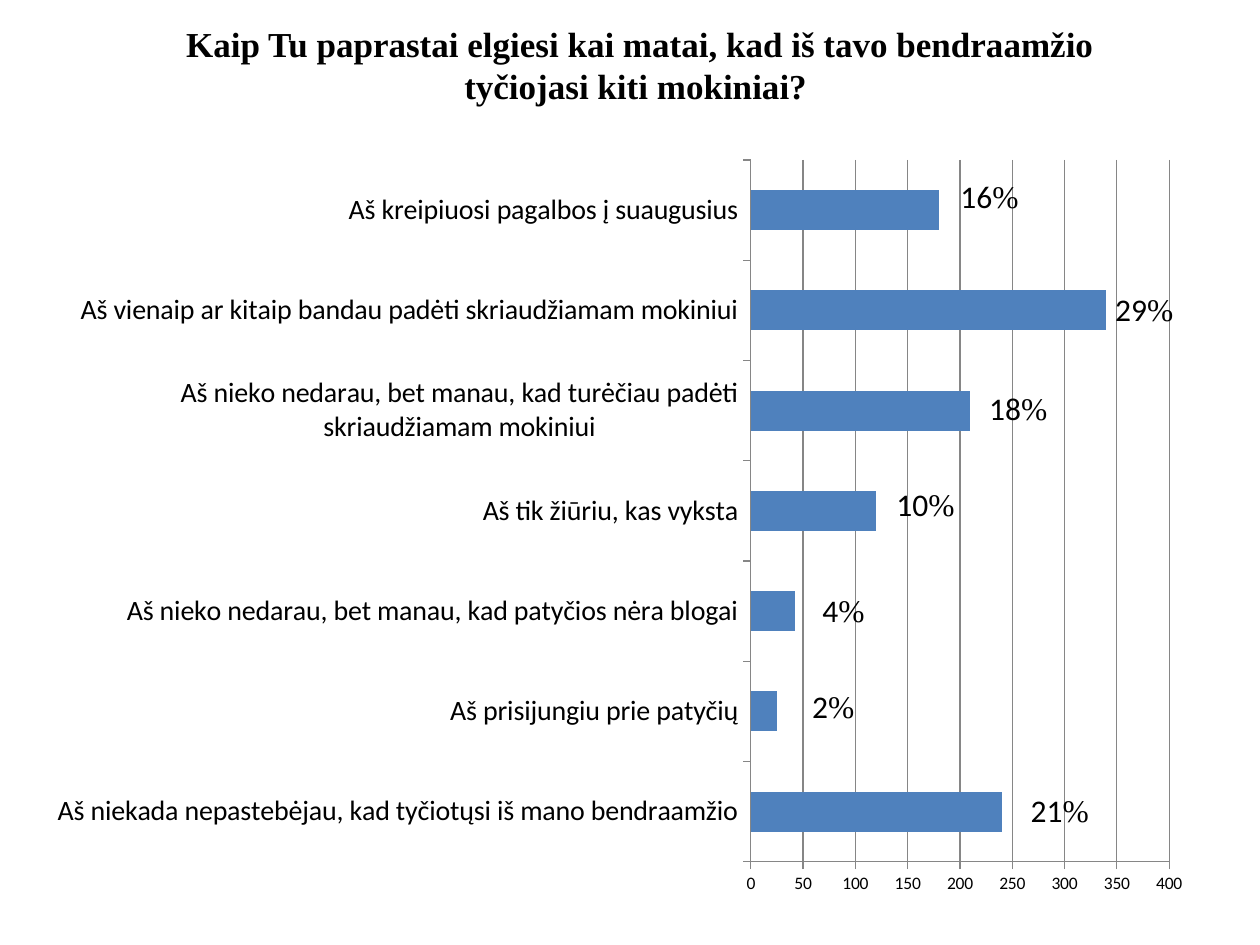
from lxml import etree
from pptx import Presentation
from pptx import util as u
from pptx.chart.data import CategoryChartData
from pptx.dml.color import RGBColor
from pptx.enum import chart as ch, text
from pptx.oxml.ns import qn

# Content
TITLE = "Kaip Tu paprastai elgiesi kai matai, kad iš tavo bendraamžio tyčiojasi kiti mokiniai? "
# answer, count, share, label shift right and down in inches
ANSWERS = [
    ("Aš niekada nepastebėjau, kad tyčiotųsi iš mano bendraamžio", 240, 21, 0.19, 0),
    ("Aš prisijungiu prie patyčių", 25, 2, 0.24, -0.03),
    ("Aš nieko nedarau, bet manau, kad patyčios nėra blogai", 42, 4, 0.18, 0),
    ("Aš tik žiūriu, kas vyksta", 120, 10, 0.12, -0.04),
    ("Aš nieko nedarau, bet manau, kad turėčiau padėti skriaudžiamam mokiniui", 210, 18, 0.11, -0.01),
    ("Aš vienaip ar kitaip bandau padėti skriaudžiamam mokiniui", 340, 29, 0.03, 0),
    ("Aš kreipiuosi pagalbos į suaugusius", 180, 16, 0.13, -0.1),
]
CHART = (0.28, 1.15, 9.29, 6.07)
PLOT = (5.68, 0.12, 3.32, 5.57)  # inside the chart
THEME = {
    "text": RGBColor(0, 0, 0), "bar": RGBColor(0x4F, 0x81, 0xBD),
    "grid": RGBColor(0x86, 0x86, 0x86),
    "head": "Times New Roman", "body": "Calibri",
    "title": 20, "category": 16, "label": 18, "axis": 10,
}


def style(font, name, size, bold=False):
    font.name, font.size, font.bold = name, u.Pt(size), bold
    font.color.rgb = THEME["text"]


def manual_layout(inches, **modes):
    """Layout element with lengths as shares of the chart's size."""
    layout = etree.Element(qn("c:layout"))
    manual = etree.SubElement(layout, qn("c:manualLayout"))
    shares = {tag: round(n / whole, 4)
              for tag, n, whole in zip("xywh", inches, CHART[2:] * 2)}
    for tag, val in {**modes, **shares}.items():
        etree.SubElement(manual, qn("c:" + tag)).set("val", str(val))
    return layout


def add_title(s):
    sp = s.shapes.add_textbox(*map(u.Inches, (1.22, 0.13, 7.72, 0.77)))
    tf = sp.text_frame
    tf.word_wrap = True
    p = tf.paragraphs[0]
    p.alignment = text.PP_ALIGN.CENTER
    r = p.add_run()
    r.text = TITLE
    style(r.font, THEME["head"], THEME["title"], True)


def add_labels(series):
    labels = series.data_labels
    labels.show_value = True
    style(labels.font, THEME["body"], THEME["label"])
    for i, (_, _, share, _, _) in enumerate(ANSWERS):
        label = series.points[i].data_label
        p = label.text_frame.paragraphs[0]
        for part, font in ((str(share), "body"), ("%", "head")):
            r = p.add_run()
            r.text = part
            style(r.font, THEME[font], THEME["label"])
        label.position = ch.XL_LABEL_POSITION.OUTSIDE_END
    # Shift each label from the end of its bar, without leader lines
    for lbl, (*_, dx, dy) in zip(series._element.iter(qn("c:dLbl")), ANSWERS):
        lbl.find(qn("c:idx")).addnext(manual_layout((dx, dy)))
    for leader in series._element.iter(qn("c:showLeaderLines")):
        leader.set("val", "0")


def add_answers_chart(s):
    data = CategoryChartData()
    data.categories = [a[0] for a in ANSWERS]
    data.add_series("Series 1", [a[1] for a in ANSWERS])
    chart = s.shapes.add_chart(ch.XL_CHART_TYPE.BAR_CLUSTERED,
                               *map(u.Inches, CHART), data).chart
    chart.has_legend = chart.has_title = False
    style(chart.font, THEME["body"], THEME["axis"])

    # Bars
    plot = chart.plots[0]
    plot.gap_width, plot.vary_by_categories = 150, False
    series = plot.series[0]
    series.format.fill.solid()
    series.format.fill.fore_color.rgb = THEME["bar"]
    add_labels(series)

    # Axes
    cat, val = chart.category_axis, chart.value_axis
    style(cat.tick_labels.font, THEME["body"], THEME["category"])
    val.minimum_scale, val.maximum_scale, val.major_unit = 0, 400, 50
    val.has_major_gridlines = True
    cat.has_major_gridlines = False
    for line in (cat.format.line, val.format.line, val.major_gridlines.format.line):
        line.color.rgb = THEME["grid"]
        line.width = u.Pt(0.75)
    for axis in (cat, val):
        axis.major_tick_mark = ch.XL_TICK_MARK.OUTSIDE

    # Plot area
    area = next(series._element.iterancestors(qn("c:plotArea")))
    for old in area.findall(qn("c:layout")):
        area.remove(old)
    area.insert(0, manual_layout(PLOT, layoutTarget="inner", xMode="edge", yMode="edge"))


def main():
    prs = Presentation()
    prs.slide_width, prs.slide_height = u.Inches(10), u.Inches(7.5)
    s = prs.slides.add_slide(prs.slide_layouts[6])
    add_title(s)
    add_answers_chart(s)
    prs.save("out.pptx")


if __name__ == "__main__":
    main()
